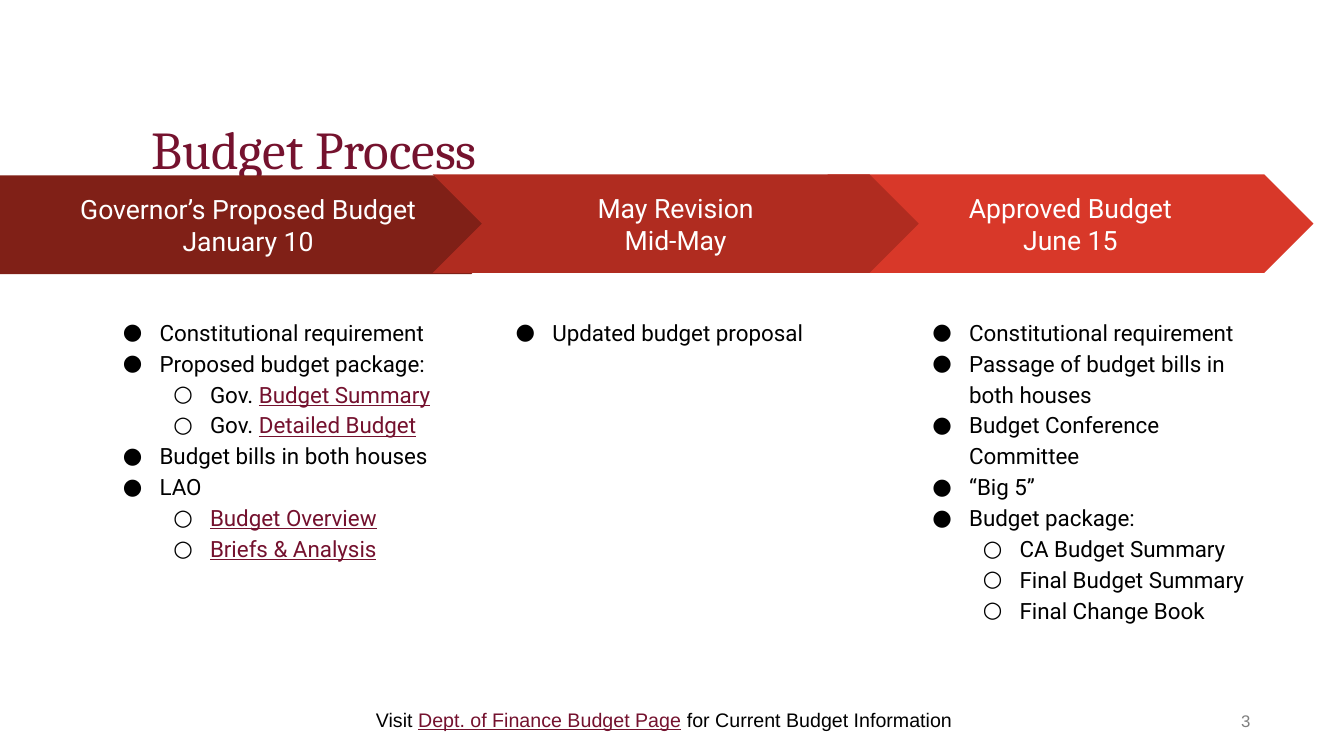
from lxml.etree import SubElement
from pptx import Presentation
from pptx.dml.color import RGBColor
from pptx.enum.shapes import MSO_SHAPE
from pptx.enum.text import MSO_ANCHOR, MSO_AUTO_SIZE, PP_ALIGN
from pptx.oxml.ns import qn
from pptx.util import Pt

COLORS = {"title": "75122E", "link": "74112E", "text": "000000", "number": "7F7F7F",
          "white": "FFFFFF", "january": "802017", "may": "B02C20", "june": "D83829"}
PX = 9525
BULLETS = "●○"

STAGES = [
    ("june", MSO_SHAPE.CHEVRON, (788, 166, 463, 94), ["Approved Budget", "June 15"],
     (863, 357), [
         (0, ["Constitutional requirement"]),
         (0, ["Passage of budget bills in both houses"]),
         (0, ["Budget Conference Committee"]),
         (0, ["“Big 5”"]),
         (0, ["Budget package:"]),
         (1, ["CA Budget Summary"]),
         (1, ["Final Budget Summary"]),
         (1, ["Final Change Book"])]),
    ("january", MSO_SHAPE.PENTAGON, (0, 167, 496, 94),
     ["Governor’s Proposed Budget", "January 10"],
     (92, 365), [
         (0, ["Constitutional requirement"]),
         (0, ["Proposed budget package:"]),
         (1, ["Gov. ", "Budget Summary"]),
         (1, ["Gov. ", "Detailed Budget"]),
         (0, ["Budget bills in both houses"]),
         (0, ["LAO"]),
         (1, ["", "Budget Overview"]),
         (1, ["", "Briefs & Analysis"])]),
    ("may", MSO_SHAPE.CHEVRON, (412, 166, 463, 94), ["May Revision", "Mid-May"],
     (466, 353), [(0, ["Updated budget proposal"])]),
]


class Deck:
    """Holds the style and the current slide, and adds each kind of element."""

    def __init__(self):
        self.prs = Presentation()
        self.prs.slide_width, self.prs.slide_height = 1280 * PX, 720 * PX
        self.s = self.prs.slides.add_slide(self.prs.slide_layouts[5])

    def frame(self, sp, insets, anchor=MSO_ANCHOR.TOP):
        tf = sp.text_frame
        tf.word_wrap = True
        tf.auto_size = MSO_AUTO_SIZE.NONE
        tf.vertical_anchor = anchor
        tf.margin_left, tf.margin_top, tf.margin_right, tf.margin_bottom = (
            v * PX for v in insets)
        return tf

    def paragraph(self, tf, first, align=PP_ALIGN.LEFT, spacing=None):
        p = tf.paragraphs[0] if first else tf.add_paragraph()
        p.alignment = align
        p.line_spacing = spacing
        return p

    def run(self, p, text, size, font, color):
        r = p.add_run()
        r.text = text
        r.font.size, r.font.name = Pt(size), font
        r.font.color.rgb = RGBColor.from_string(COLORS[color])
        if color == "link":
            r.font.underline = True

    def runs(self, p, parts, size, font):
        for i, part in enumerate(parts):
            if part:
                self.run(p, part, size, font, "link" if i % 2 else "text")

    def box(self, left, top, width, height):
        return self.s.shapes.add_textbox(left * PX, top * PX, width * PX, height * PX)

    def title(self, text, left, top, width, height):
        sp = self.s.shapes.title
        sp.left, sp.top, sp.width, sp.height = left * PX, top * PX, width * PX, height * PX
        tf = self.frame(sp, (10, 5, 10, 5), MSO_ANCHOR.BOTTOM)
        self.run(self.paragraph(tf, True, spacing=0.9), text, 38, "Cambria", "title")

    def number(self, text, *at):
        tf = self.frame(self.box(*at), (10, 5, 0, 5), MSO_ANCHOR.MIDDLE)
        self.run(self.paragraph(tf, True, PP_ALIGN.RIGHT), text, 12, "Arial", "number")

    def arrow(self, kind, color, lines, at):
        sp = self.s.shapes.add_shape(kind, *(v * PX for v in at))
        sp.adjustments[0] = 0.5
        sp.shadow.inherit = False
        sp.fill.solid()
        sp.fill.fore_color.rgb = RGBColor.from_string(COLORS[color])
        sp.line.fill.background()
        tf = self.frame(sp, (12, 12, 12, 12), MSO_ANCHOR.MIDDLE)
        for i, line in enumerate(lines):
            self.run(self.paragraph(tf, i == 0, PP_ALIGN.CENTER), line, 19, "Roboto", "white")

    def bullets(self, items, *at):
        tf = self.frame(self.box(*at), (12, 12, 12, 12))
        for i, (level, parts) in enumerate(items):
            p = self.paragraph(tf, i == 0, spacing=1.15)
            p.level = level
            pPr = p._p.get_or_add_pPr()
            pPr.set("marL", str(48 * (level + 1) * PX))
            pPr.set("indent", str(-35 * PX))
            SubElement(SubElement(pPr, qn("a:buClr")), qn("a:srgbClr"), val=COLORS["text"])
            SubElement(pPr, qn("a:buFont"), typeface="Roboto")
            SubElement(pPr, qn("a:buChar"), char=BULLETS[level])
            self.runs(p, parts, 16, "Roboto")

    def footnote(self, parts, *at):
        tf = self.frame(self.box(*at), (10, 10, 10, 10))
        tf.auto_size = MSO_AUTO_SIZE.SHAPE_TO_FIT_TEXT
        self.runs(self.paragraph(tf, True), parts, 14, "Arial")


def main():
    deck = Deck()
    deck.title("Budget Process", 134, 38, 1055, 139)
    deck.number("3", 1095, 667, 96, 38)
    for color, kind, at, lines, (left, width), items in STAGES:
        deck.arrow(kind, color, lines, at)
        deck.bullets(items, left, 288, width, 366)
    deck.footnote(["Visit ", "Dept. of Finance Budget Page", " for Current Budget Information"],
                  348, 664, 585, 42)
    deck.prs.save("out.pptx")


if __name__ == "__main__":
    main()
